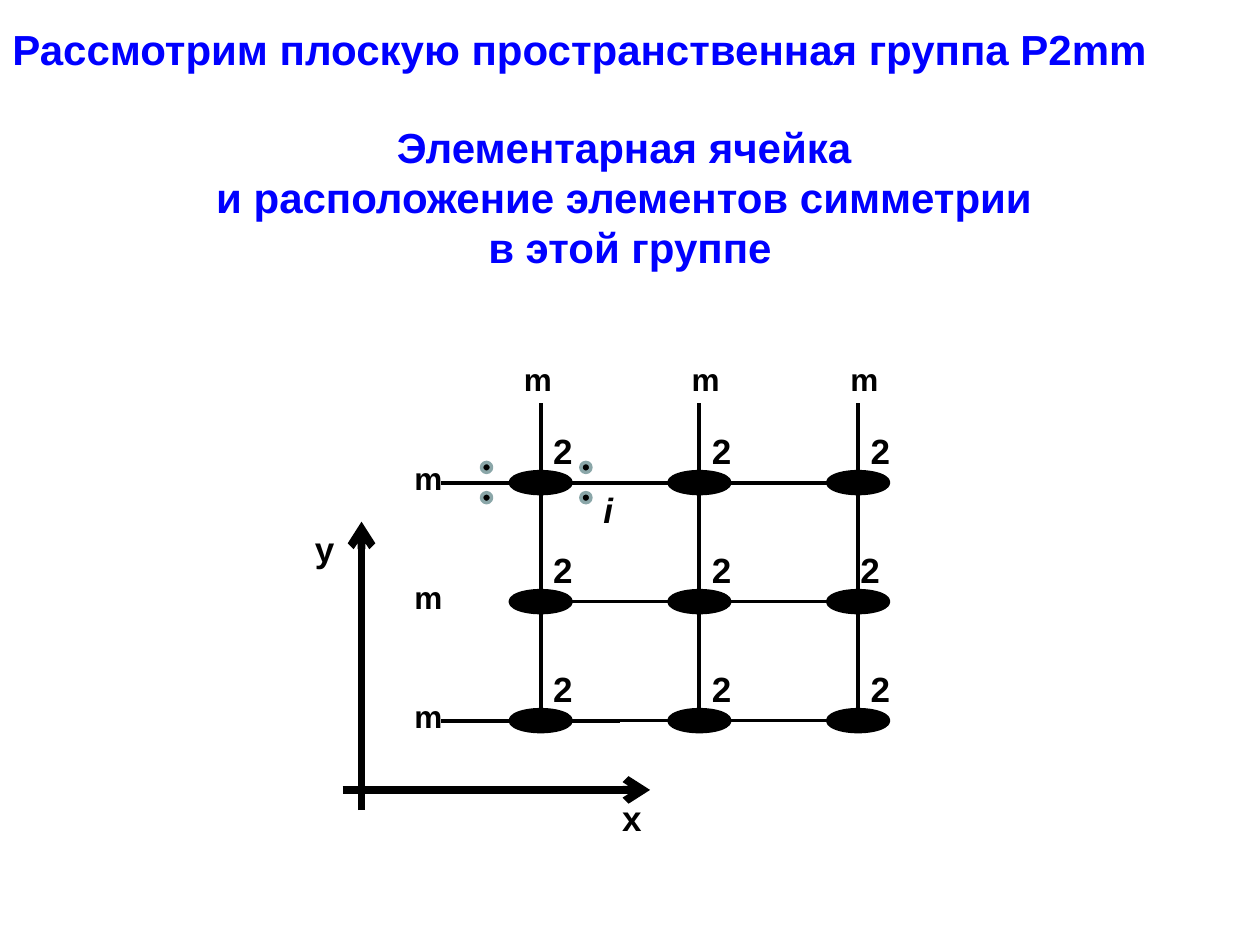
import pptx
import pptx.util
import pptx.dml.color
import pptx.enum.shapes
import pptx.enum.text
import pptx.oxml.ns
from lxml import etree

Pt = pptx.util.Pt
SHAPES = pptx.enum.shapes.MSO_SHAPE
ALIGN = pptx.enum.text.PP_ALIGN

# Content
COLORS = {"ink": "000000", "paper": "FFFFFF", "heading": "0000FF", "ring": "8AA6A8"}
FONT = "Arial"
HEADINGS = [  # lines, top, height, alignment
    (["Рассмотрим плоскую пространственная группа P2mm"], 10, 36.4, ALIGN.LEFT),
    (["Элементарная ячейка ", "и расположение элементов симметрии ", "в этой группе"],
     65.6, 94.6, ALIGN.CENTER),
]
COLUMNS = [309 + 90.7 * i for i in range(3)]
ROWS = [275.8 + 68 * i for i in range(3)]
MIRROR_TOP, MIRROR_BOTTOM, MIRROR_LEFT = 230.4, 417.6, 252
MIRROR_LABEL_LEFTS = [292.3, 388.1, 478.8]
AXES = [((195.8, 451.4), (371.5, 451.4)), ((206.6, 463), (206.6, 298.1))]
AXIS_LABELS = [("x", 348.5, 451.4), ("y", 172.8, 298.1)]
ATOM_COLUMNS, ATOM_ROWS = [278, 334.8], [267.1, 284.4]

deck = pptx.Presentation()
deck.slide_width, deck.slide_height = Pt(720), Pt(540)
slide = deck.slides.add_slide(deck.slide_layouts[6])
shapes = slide.shapes


def rgb(name):
    return pptx.dml.color.RGBColor.from_string(COLORS[name])


def add_figure(kind, left, top, width, height, fill, line=None, weight=2):
    figure = shapes.add_shape(kind, Pt(left), Pt(top), Pt(width), Pt(height))
    figure.shadow.inherit = False
    figure.fill.solid()
    figure.fill.fore_color.rgb = rgb(fill)
    if line:
        figure.line.color.rgb = rgb(line)
        figure.line.width = Pt(weight)
    else:
        figure.line.fill.background()
    return figure


def add_ellipse(x, y, width, height, **style):
    add_figure(SHAPES.OVAL, x - width / 2, y - height / 2, width, height, "ink", **style)


def add_line(start, end, weight=2.25, arrow=False):
    line = shapes.add_connector(pptx.enum.shapes.MSO_CONNECTOR.STRAIGHT,
                                *(Pt(v) for v in (*start, *end)))
    line.line.color.rgb = rgb("ink")
    line.line.width = Pt(weight)
    if arrow:
        etree.SubElement(line.line._get_or_add_ln(), pptx.oxml.ns.qn("a:tailEnd"), type="arrow")
    etree.SubElement(line._element.spPr, pptx.oxml.ns.qn("a:effectLst"))


def write(holder, lines, size=20, color="ink", italic=False, align=ALIGN.LEFT, wrap=False):
    frame = holder.text_frame
    frame.word_wrap = wrap
    frame.auto_size = pptx.enum.text.MSO_AUTO_SIZE.SHAPE_TO_FIT_TEXT
    frame.vertical_anchor = pptx.enum.text.MSO_ANCHOR.TOP
    for i, line in enumerate(lines):
        paragraph = frame.add_paragraph() if i else frame.paragraphs[0]
        paragraph.alignment = align
        run = paragraph.add_run()
        run.text = line
        run.font.name, run.font.size = FONT, Pt(size)
        run.font.bold, run.font.italic = True, italic
        run.font.color.rgb = rgb(color)


def add_label(text, left, top, width=25.9, height=31.5, **style):
    write(shapes.add_textbox(Pt(left), Pt(top), Pt(width), Pt(height)), [text], **style)


# Unit cells
cell_width = COLUMNS[-1] - COLUMNS[0]
for top, bottom, edge in zip(ROWS, ROWS[1:], ("ring", "ink")):
    add_figure(SHAPES.RECTANGLE, COLUMNS[0], top, cell_width, bottom - top, "paper", line=edge)

# Mirror lines
add_line((MIRROR_LEFT, ROWS[0]), (507.6, ROWS[0]))
add_line((MIRROR_LEFT, ROWS[2]), (354.2, ROWS[2]))
for x in COLUMNS:
    add_line((x, MIRROR_BOTTOM), (x, MIRROR_TOP))

# Two-fold axes
for row, y in enumerate(ROWS):
    for column, x in enumerate(COLUMNS):
        add_ellipse(x, y, 33.8, 11.5, line="ink", weight=3)
        nudge = -5.8 if (row, column) == (1, 2) else 0
        add_label("2", x + nudge, y - 34)

# Mirror labels
for left in MIRROR_LABEL_LEFTS:
    add_label("m", left, 202.3, 28.8, 29.1, size=18)
for y in ROWS:
    add_label("m", 229.7, y - 17.2, 28.8, 29.1, size=18)

# Coordinate axes
for start, end in AXES:
    add_line(start, end, weight=4.5, arrow=True)
for name, left, top in AXIS_LABELS:
    add_label(name, left, top)

# Atoms around the first node
for x in ATOM_COLUMNS:
    for y in ATOM_ROWS:
        add_ellipse(x, y, 5.7, 5.7, line="ring")
add_label("i", 337.7, 275.8, 20.2, italic=True)

# Headings
for lines, top, height, align in HEADINGS:
    band = add_figure(SHAPES.RECTANGLE, 0, top, 720, height, "paper")
    write(band, lines, size=24, color="heading", align=align, wrap=True)

deck.save("out.pptx")
